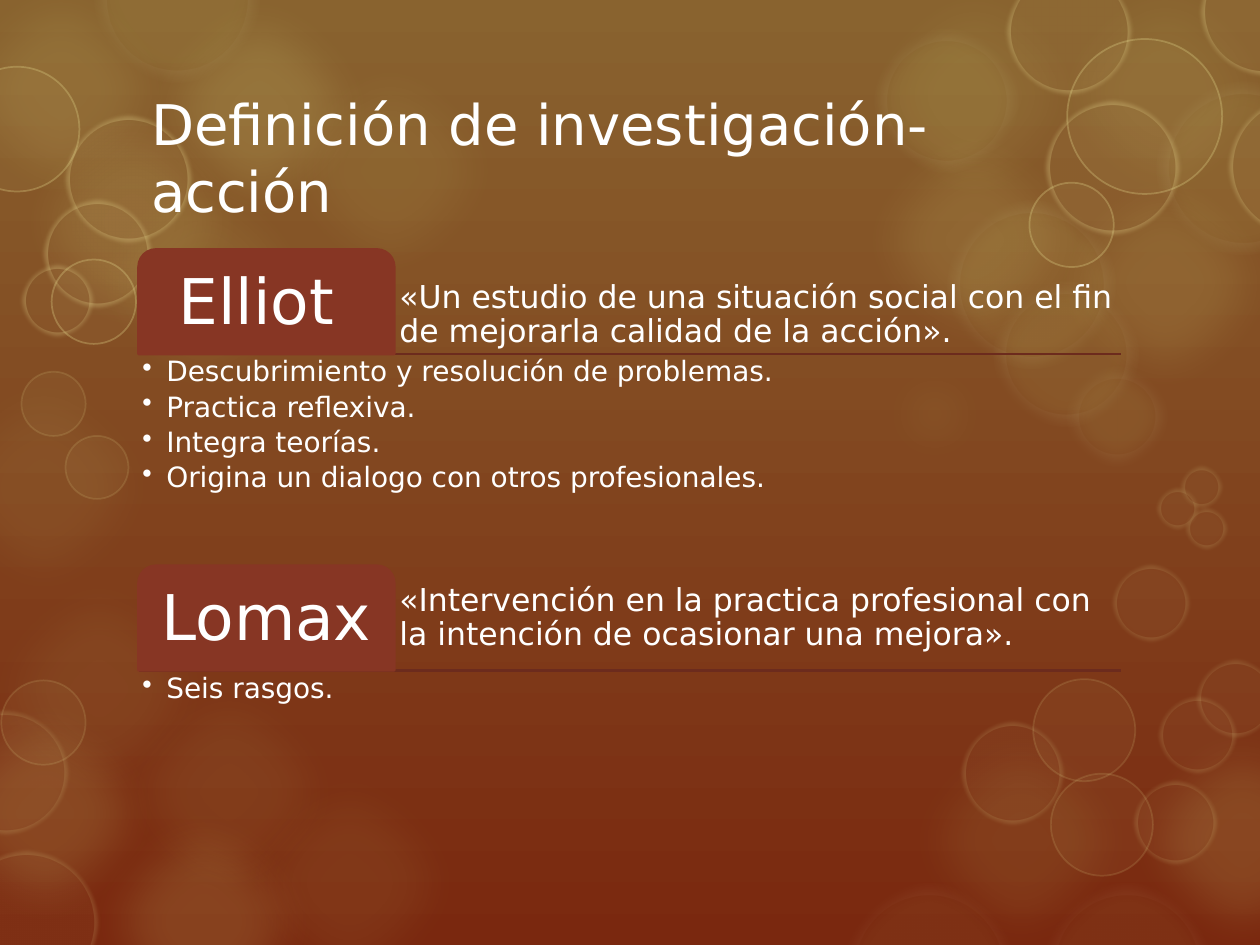
from dataclasses import dataclass

import pptx
import pptx.util
import pptx.dml.color
import pptx.enum.shapes
import pptx.enum.text
import pptx.oxml.ns
from lxml import etree

Inches, Pt = pptx.util.Inches, pptx.util.Pt
RGB = pptx.dml.color.RGBColor.from_string
SHAPE = pptx.enum.shapes.MSO_SHAPE
ANCHOR = pptx.enum.text.MSO_ANCHOR
ALIGN = pptx.enum.text.PP_ALIGN
qn = pptx.oxml.ns.qn


@dataclass(frozen=True)
class Theme:
    font: str = "DejaVu Sans"
    text: str = "FFFFFF"
    top: str = "89632F"
    bottom: str = "7A280F"
    tab: str = "873624"
    rule: str = "6C2B1D"
    glow: str = "D1CA75"
    pale: str = "E3D88C"
    rim: str = "F4F2DD"
    title_size: int = 32
    name_size: int = 36
    quote_size: int = 18
    point_size: int = 16


class SlideBuilder:
    def __init__(self, slide, theme):
        self.slide, self.theme = slide, theme

    def background(self):
        fill = self.slide.background.fill
        fill.gradient()
        fill.gradient_angle = 270
        colors = (self.theme.top, self.theme.bottom)
        for position, (stop, color) in enumerate(zip(fill.gradient_stops, colors)):
            stop.position = position
            stop.color.rgb = RGB(color)

    def bubble(self, x, y, size, color, alpha, rim=None, soft=0):
        """Draw a translucent circle; rim is colour, width, opacity percent."""
        circle = self.slide.shapes.add_shape(
            SHAPE.OVAL, *map(Inches, (x, y, size, size)))
        self.paint(circle, color, *(rim[:2] if rim else ()))
        alphas = [alpha] + ([rim[2]] if rim else [])
        properties = circle._element.spPr
        for tint, percent in zip(properties.iter(qn("a:srgbClr")), alphas):
            etree.SubElement(tint, qn("a:alpha"), val=str(percent * 1000))
        if soft:
            etree.SubElement(properties.find(qn("a:effectLst")), qn("a:softEdge"),
                             rad=str(Inches(soft)))

    def paint(self, shape, color, line_color=None, line_width=0):
        shape.shadow.inherit = False
        shape.fill.solid()
        shape.fill.fore_color.rgb = RGB(color)
        if line_color:
            shape.line.color.rgb = RGB(line_color)
            shape.line.width = Pt(line_width)
        else:
            shape.line.fill.background()

    def tab(self, x, y, width, height):
        shape = self.slide.shapes.add_shape(
            SHAPE.ROUND_2_SAME_RECTANGLE, *map(Inches, (x, y, width, height)))
        shape.adjustments[0], shape.adjustments[1] = 0.167, 0
        self.paint(shape, self.theme.tab, self.theme.tab, 1.5)

    def rule(self, x1, x2, y):
        line = self.slide.shapes.add_connector(
            pptx.enum.shapes.MSO_CONNECTOR.STRAIGHT, *map(Inches, (x1, y, x2, y)))
        line.line.color.rgb = RGB(self.theme.rule)
        line.line.width = Pt(1.5)
        etree.SubElement(line._element.spPr, qn("a:effectLst"))

    def text(self, box, lines, size, inset=None, anchor=ANCHOR.TOP,
             bullets=False, **paragraph_format):
        frame = self.slide.shapes.add_textbox(*map(Inches, box)).text_frame
        frame_format = {"word_wrap": True, "vertical_anchor": anchor}
        if inset is not None:
            for side in ("left", "right", "top", "bottom"):
                frame_format[f"margin_{side}"] = Inches(inset)
        for name, value in frame_format.items():
            setattr(frame, name, value)
        for index, line in enumerate(lines):
            paragraph = frame.paragraphs[0] if index == 0 else frame.add_paragraph()
            for name, value in paragraph_format.items():
                setattr(paragraph, name, value)
            run = paragraph.add_run()
            run.text = line
            run_format = {"name": self.theme.font, "size": Pt(size)}
            for name, value in run_format.items():
                setattr(run.font, name, value)
            run.font.color.rgb = RGB(self.theme.text)
            if bullets:
                properties = paragraph._p.get_or_add_pPr()
                properties.set("marL", str(Inches(0.19)))
                properties.set("indent", str(-Inches(0.19)))
                etree.SubElement(properties, qn("a:buChar"), char="•")


theme = Theme()

# Glows: opacity percent -> (left, top, diameter)
GLOWS = {
    8: [(-0.26, 4.42, 2.09), (0.77, 5.24, 2.09), (1.73, 5.96, 2.09), (-0.7, 2.82, 2.09)],
    10: [(0.57, 1.2, 2.09), (2.05, 0.31, 2.09), (8.2, -0.32, 2.09), (6.69, -0.29, 2.09),
         (7.06, 5.62, 2.09), (6.75, 2.62, 1.33)],
    14: [(-0.56, -0.32, 2.09)],
    15: [(0, 0.72, 2.09), (8.2, 1.2, 2.09), (6.69, 0.86, 2.09)],
    16: [(0.57, 6.27, 2.09), (8.81, 5.62, 2.09), (-0.69, 5.41, 2.09)],
    20: [(1.01, -0.18, 2.09)],
}
# Wide-rimmed bubbles: (fill opacity, rim opacity) -> circles
HALOS = {
    (10, 6): [(9.18, 0.65, 1.37), (6.94, 0.23, 1.14), (7.52, 1.59, 1.33),
              (7.89, 2.24, 1.14), (8.47, 2.91, 0.79), (0.75, -0.66, 1.31)],
    (6, 4): [(6.69, 7.01, 1.37), (8.28, 7.01, 1.33)],
}
# Rings: (rim width, rim opacity) -> circles
RINGS = {
    (1, 15): [(0.01, 5.4, 0.67), (8.34, 6.14, 0.81), (8.2, 5.39, 0.81), (0.17, 2.95, 0.51),
              (0.52, 3.46, 0.5)],
    (5, 15): [(-0.35, 6.75, 1.13), (-0.44, 5.64, 0.98), (7.63, 5.73, 0.81), (9, 6.2, 0.66),
              (8.83, 4.48, 0.61), (9.2, 5.53, 0.61), (9.5, 5.24, 0.61), (9.37, 3.7, 0.33),
              (9.18, 3.87, 0.33), (9.41, 4.03, 0.33)],
    (1, 30): [(-0.36, 0.53, 0.99), (0.41, 2.06, 0.67), (8.47, 0.31, 1.23), (8.17, 1.45, 0.67)],
    (5, 30): [(0.52, 0.92, 1), (0.35, 1.59, 0.85), (0.17, 2.1, 0.57), (7.99, -0.24, 0.99),
              (9.53, -0.4, 1), (9.75, 0.76, 1.12), (8.3, 0.8, 1.06)],
}
# Authors: top of tab, quote top and height, name, quote, points
AUTHORS = [
    (1.98, 1.98, 0.83, "Elliot ",
     "«Un estudio de una situación social con el fin de mejorarla calidad de la acción».",
     ["Descubrimiento y resolución de problemas.", "Practica reflexiva.",
      "Integra teorías.", "Origina un dialogo con otros profesionales."]),
    (4.49, 4.61, 0.61, "Lomax ",
     "«Intervención en la practica profesional con la intención de ocasionar una mejora».",
     ["Seis rasgos."]),
]
LEFT, WIDTH, TAB_WIDTH, TAB_HEIGHT = 1.1, 7.79, 2.03, 0.83


def main():
    deck = pptx.Presentation()
    deck.slide_width, deck.slide_height = Inches(10), Inches(7.5)
    builder = SlideBuilder(deck.slides.add_slide(deck.slide_layouts[6]), theme)

    # Backdrop
    builder.background()
    for alpha, circles in GLOWS.items():
        for circle in circles:
            builder.bubble(*circle, theme.glow, alpha, soft=0.35)
    for (alpha, rim_alpha), circles in HALOS.items():
        for circle in circles:
            builder.bubble(*circle, theme.glow, alpha, (theme.rim, 14, rim_alpha), 0.14)
    for (width, rim_alpha), circles in RINGS.items():
        for circle in circles:
            builder.bubble(*circle, theme.pale, 5, (theme.pale, width, rim_alpha),
                           0.04 if width > 1 else 0)

    # Title
    builder.text((LEFT, 0.74, WIDTH, 1.01), ["Definición de investigación-acción"],
                 theme.title_size, anchor=ANCHOR.MIDDLE)

    # Author blocks
    for top, quote_top, quote_height, name, quote, points in AUTHORS:
        base = top + TAB_HEIGHT
        builder.rule(LEFT, LEFT + 7.8, base)
        builder.text((LEFT + TAB_WIDTH, quote_top, 5.77, quote_height), [quote],
                     theme.quote_size, 0.04, ANCHOR.BOTTOM, line_spacing=0.9)
        builder.tab(LEFT, top, TAB_WIDTH, TAB_HEIGHT)
        builder.text((LEFT + 0.04, top + 0.04, 1.95, 0.79), [name], theme.name_size,
                     0.07, ANCHOR.MIDDLE, alignment=ALIGN.CENTER, line_spacing=0.9)
        builder.text((LEFT, base, WIDTH, 1.65), points, theme.point_size, 0.03,
                     bullets=True, line_spacing=0.9, space_after=Pt(2.8))

    deck.save("out.pptx")


if __name__ == "__main__":
    main()
